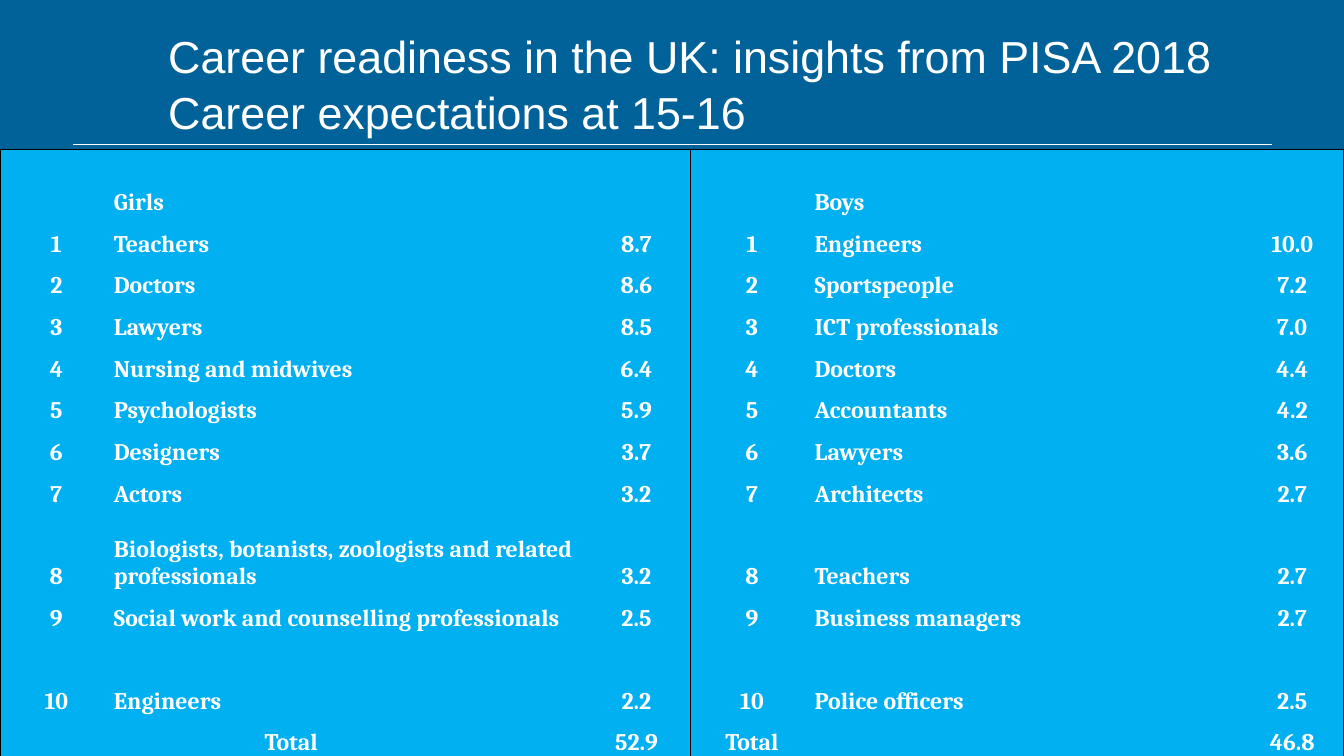
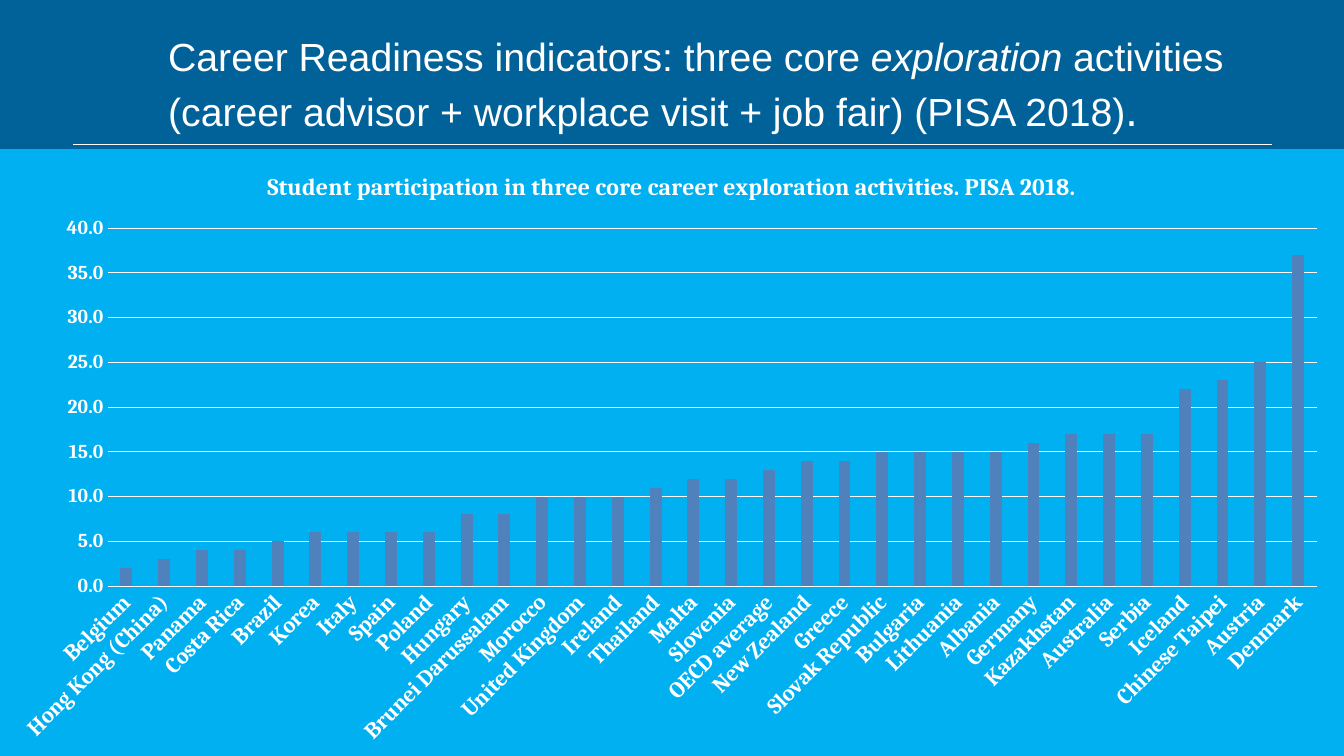
import lxml.etree
import pptx
import pptx.chart.data
import pptx.dml.color
import pptx.enum.chart
import pptx.enum.shapes
import pptx.enum.text
import pptx.oxml
import pptx.oxml.ns
import pptx.util

Cm = pptx.util.Cm
Pt = pptx.util.Pt
qn = pptx.oxml.ns.qn

COLORS = {
    "background": "006299",
    "panel": "00B0F0",
    "text": "FFFFFF",
    "border": "000000",
    "bar": "4F81BD",
}
TITLE_FONT = "Arial"
BODY_FONT = "Cambria"
SLIDE_W, SLIDE_H = 33.87, 19.05
PANEL_TOP = 3.76
NO_GRID_STYLE = "{2D5ABB26-0587-4C30-8999-92F81FD0307C}"

COL_WIDTHS = [2.84, 11.84, 2.72, 3.1, 10.77, 2.59]
HEAD_ROW, ROW, TALL_ROW = 1.7, 1.05, 2.08
TALL_RANKS = (8, 10)
GIRLS = [
    ("Teachers", "8.7"), ("Doctors", "8.6"), ("Lawyers", "8.5"),
    ("Nursing and midwives", "6.4"), ("Psychologists", "5.9"),
    ("Designers", "3.7"), ("Actors", "3.2"),
    ("Biologists, botanists, zoologists and related professionals", "3.2"),
    ("Social work and counselling professionals", "2.5"), ("Engineers", "2.2"),
]
BOYS = [
    ("Engineers", "10.0"), ("Sportspeople", "7.2"), ("ICT professionals", "7.0"),
    ("Doctors", "4.4"), ("Accountants", "4.2"), ("Lawyers", "3.6"),
    ("Architects", "2.7"), ("Teachers", "2.7"), ("Business managers", "2.7"),
    ("Police officers", "2.5"),
]
PARTICIPATION = {
    "Belgium": 2, "Hong Kong (China)": 3, "Panama": 4, "Costa Rica": 4,
    "Brazil": 5, "Korea": 6, "Italy": 6, "Spain": 6, "Poland": 6, "Hungary": 8,
    "Brunei Darussalam": 8, "Morocco": 10, "United Kingdom": 10, "Ireland": 10,
    "Thailand": 11, "Malta": 12, "Slovenia": 12, "OECD average": 13,
    "New Zealand": 14, "Greece": 14, "Slovak Republic": 15, "Bulgaria": 15,
    "Lithuania": 15, "Albania": 15, "Germany": 16, "Kazakhstan": 17,
    "Australia": 17, "Serbia": 17, "Iceland": 22, "Chinese Taipei": 23,
    "Austria": 25, "Denmark": 37,
}


def rgb(name):
    return pptx.dml.color.RGBColor.from_string(COLORS[name])


def style_font(font, name, size, bold=False, italic=False):
    font.name = name
    font.size = Pt(size)
    font.bold = bold
    font.italic = italic
    font.color.rgb = rgb("text")


def style_line(line, width):
    line.color.rgb = rgb("text")
    line.width = Pt(width)


def add_rule(s):
    y = Cm(3.63)
    rule = s.shapes.add_connector(
        pptx.enum.shapes.MSO_CONNECTOR.STRAIGHT, Cm(1.85), y, Cm(32.05), y)
    style_line(rule.line, 0.5)
    lxml.etree.SubElement(rule._element.spPr, qn("a:effectLst"))


def add_title(s, lines):
    sp = s.shapes.add_textbox(Cm(3.99), Cm(0.66), Cm(27.46), Cm(2.84))
    tf = sp.text_frame
    tf.word_wrap = True
    tf.vertical_anchor = pptx.enum.text.MSO_ANCHOR.MIDDLE
    p = tf.paragraphs[0]
    p.line_spacing = 1.05
    for i, runs in enumerate(lines):
        if i:
            p.add_line_break()
        for text, size, italic in runs:
            r = p.add_run()
            r.text = text
            style_font(r.font, TITLE_FONT, size, italic=italic)


def add_slide(prs, title_lines):
    s = prs.slides.add_slide(prs.slide_layouts[6])
    add_rule(s)
    add_title(s, title_lines)
    return s


def set_border(cell, side):
    tcPr = cell._tc.get_or_add_tcPr()
    ln = lxml.etree.SubElement(tcPr, qn(f"a:ln{side}"), w=str(Pt(0.5)))
    fill = lxml.etree.SubElement(ln, qn("a:solidFill"))
    lxml.etree.SubElement(fill, qn("a:srgbClr"), val=COLORS["border"])


def fill_cell(cell, text, centred, borders):
    cell.margin_left = cell.margin_right = cell.margin_top = Cm(0.03)
    cell.margin_bottom = 0
    cell.vertical_anchor = pptx.enum.text.MSO_ANCHOR.BOTTOM
    for side in borders:
        set_border(cell, side)
    cell.fill.solid()
    cell.fill.fore_color.rgb = rgb("panel")
    p = cell.text_frame.paragraphs[0]
    if centred:
        p.alignment = pptx.enum.text.PP_ALIGN.CENTER
    if text:
        r = p.add_run()
        r.text = text
        style_font(r.font, BODY_FONT, 17, bold=True)


def ranking_rows():
    rows = [["", "Girls", "", "", "Boys", ""]]
    for rank, (girl, boy) in enumerate(zip(GIRLS, BOYS), 1):
        rows.append([str(rank), *girl, str(rank), *boy])
    rows.append(["Total", "", "52.9", "Total", "", "46.8"])
    return rows


def add_ranking_table(s):
    rows = ranking_rows()
    heights = [HEAD_ROW] + [TALL_ROW if i in TALL_RANKS else ROW
                            for i in range(1, len(rows))]
    frame = s.shapes.add_table(len(rows), len(COL_WIDTHS), 0, Cm(PANEL_TOP),
                               Cm(sum(COL_WIDTHS)), Cm(sum(heights)))
    table = frame.table
    table.first_row = table.horz_banding = False
    table._tbl.tblPr.find(qn("a:tableStyleId")).text = NO_GRID_STYLE
    for column, width in zip(table.columns, COL_WIDTHS):
        column.width = Cm(width)
    for row, height in zip(table.rows, heights):
        row.height = Cm(height)
    for i, texts in enumerate(rows):
        for j, text in enumerate(texts):
            borders = [side for side, on in
                       (("L", j == 0), ("R", j % 3 == 2), ("T", i == 0)) if on]
            fill_cell(table.cell(i, j), text, j % 3 != 1, borders)
    last = len(rows) - 1
    table.cell(last, 0).merge(table.cell(last, 1))


def set_plot_layout(chart, x, y, w, h):
    plot_area = chart._chartSpace.chart.plotArea
    for old in plot_area.findall(qn("c:layout")):
        plot_area.remove(old)
    layout = lxml.etree.Element(qn("c:layout"))
    manual = lxml.etree.SubElement(layout, qn("c:manualLayout"))
    for tag, val in (("layoutTarget", "inner"), ("xMode", "edge"),
                     ("yMode", "edge"), ("x", x), ("y", y), ("w", w), ("h", h)):
        lxml.etree.SubElement(manual, qn(f"c:{tag}"), val=str(val))
    plot_area.insert(0, layout)


def set_chart_fill(chart):
    spPr = lxml.etree.Element(qn("c:spPr"))
    fill = lxml.etree.SubElement(spPr, qn("a:solidFill"))
    lxml.etree.SubElement(fill, qn("a:srgbClr"), val=COLORS["panel"])
    ln = lxml.etree.SubElement(spPr, qn("a:ln"))
    lxml.etree.SubElement(ln, qn("a:noFill"))
    chart._chartSpace.chart.addnext(spPr)


def style_axes(chart):
    no_tick = pptx.enum.chart.XL_TICK_MARK.NONE
    for axis, size in ((chart.category_axis, 16), (chart.value_axis, 14)):
        axis.major_tick_mark = axis.minor_tick_mark = no_tick
        style_font(axis.tick_labels.font, BODY_FONT, size, bold=True)
    cat_axis, val_axis = chart.category_axis, chart.value_axis
    cat_axis.has_major_gridlines = False
    style_line(cat_axis.format.line, 0.75)
    body = cat_axis._element.find(qn("c:txPr")).find(qn("a:bodyPr"))
    body.set("rot", "-2700000")
    val_axis.minimum_scale, val_axis.maximum_scale = 0, 40
    val_axis.major_unit = 5
    val_axis.tick_labels.number_format = "0.0"
    val_axis.tick_labels.number_format_is_linked = False
    val_axis.format.line.fill.background()
    style_line(val_axis.major_gridlines.format.line, 0.75)


def add_participation_chart(s):
    data = pptx.chart.data.CategoryChartData(number_format="0.0")
    data.categories = list(PARTICIPATION)
    data.add_series("Series 1", list(PARTICIPATION.values()))
    chart = s.shapes.add_chart(
        pptx.enum.chart.XL_CHART_TYPE.COLUMN_CLUSTERED, 0, Cm(PANEL_TOP),
        Cm(SLIDE_W), Cm(SLIDE_H - PANEL_TOP), data).chart
    style_font(chart.font, BODY_FONT, 14, bold=True)
    chart.has_legend = False
    chart.has_title = True
    r = chart.chart_title.text_frame.paragraphs[0].add_run()
    r.text = "Student participation in three core career exploration activities. PISA 2018."
    style_font(r.font, BODY_FONT, 17, bold=True)
    chart.chart_title.include_in_layout = False
    plot = chart.plots[0]
    plot.gap_width, plot.overlap = 219, -27
    plot.vary_by_categories = False
    fill = plot.series[0].format.fill
    fill.solid()
    fill.fore_color.rgb = rgb("bar")
    style_axes(chart)
    set_plot_layout(chart, 0.08, 0.13, 0.9, 0.59)
    set_chart_fill(chart)


def main():
    prs = pptx.Presentation()
    prs.slide_width, prs.slide_height = Cm(SLIDE_W), Cm(SLIDE_H)
    background = prs.slide_master.background.fill
    background.solid()
    background.fore_color.rgb = rgb("background")

    s = add_slide(prs, [
        [("Career readiness in the UK: insights from PISA 2018", 32, False)],
        [("Career expectations at 15-16", 32, False)],
    ])
    add_ranking_table(s)

    s = add_slide(prs, [[
        ("Career Readiness indicators: three core ", 28, False),
        ("exploration", 28, True),
        (" activities (career advisor + workplace visit + job fair) (PISA 2018)", 28, False),
        (".", 32, False),
    ]])
    add_participation_chart(s)

    prs.save("out.pptx")


if __name__ == "__main__":
    main()
